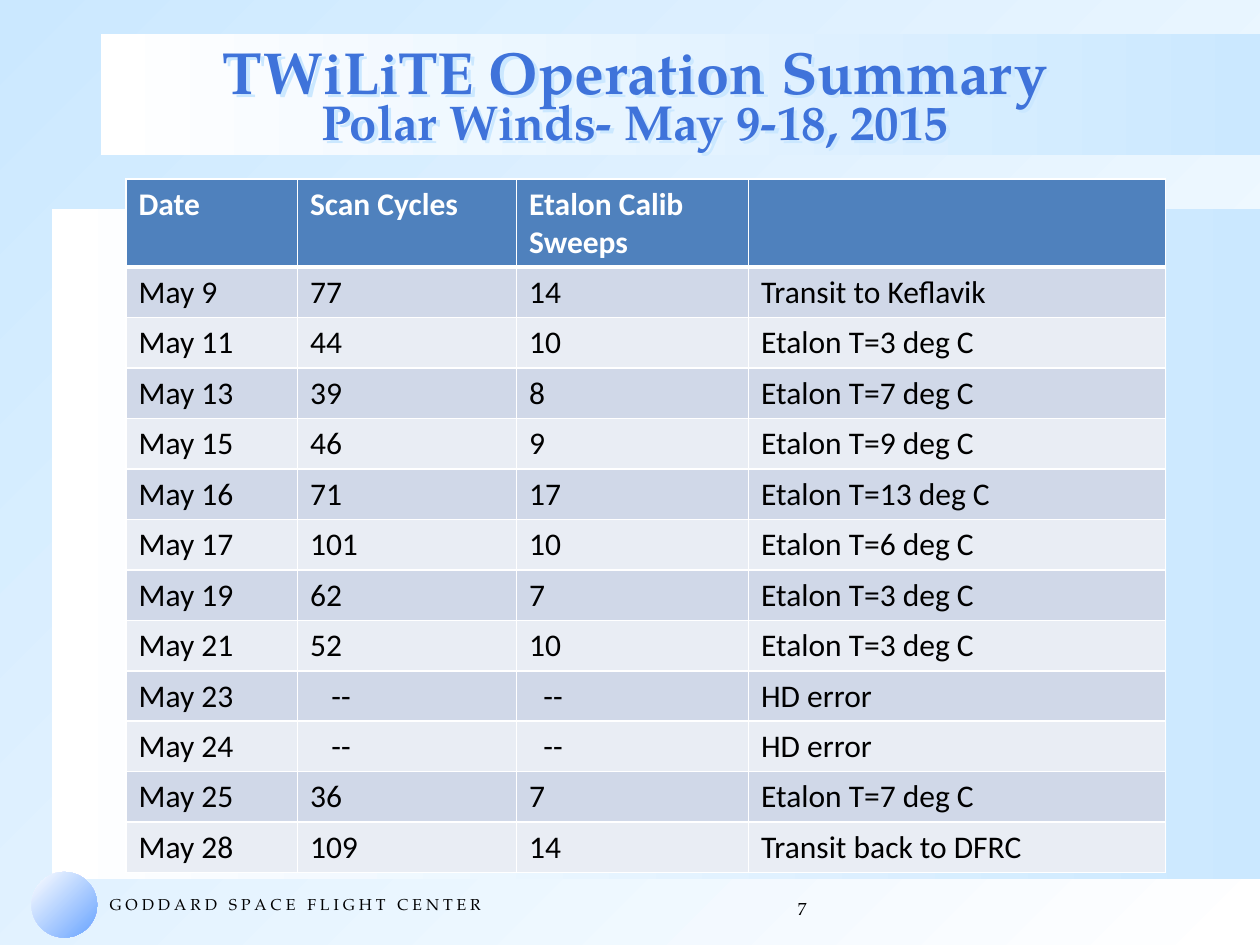
from dataclasses import dataclass

from lxml import etree
from pptx import Presentation
from pptx.dml.color import RGBColor
from pptx.enum.shapes import MSO_SHAPE
from pptx.enum.text import MSO_ANCHOR, PP_ALIGN
from pptx.oxml import parse_xml
from pptx.oxml.ns import nsdecls, qn
from pptx.util import Pt

RECTANGLE, OVAL = MSO_SHAPE.RECTANGLE, MSO_SHAPE.OVAL
LEFT, CENTER, RIGHT = PP_ALIGN.LEFT, PP_ALIGN.CENTER, PP_ALIGN.RIGHT
TOP, MIDDLE = MSO_ANCHOR.TOP, MSO_ANCHOR.MIDDLE


@dataclass(frozen=True)
class Theme:
    sky: str = "CBE8FF"
    white: str = "FFFFFF"
    black: str = "000000"
    ball: str = "67A3FF"
    title: str = "3F73DA"
    header: str = "4F81BD"
    bands: tuple = ("D0D8E8", "E9EDF4")
    serif: str = "TeX Gyre Pagella"
    sans: str = "Calibri"
    title_size: float = 34
    subtitle_size: float = 28
    table_size: float = 18
    number_size: float = 10
    footer_size: float = 9


THEME = Theme()

HEADERS = ("Date", "Scan Cycles", "Etalon Calib Sweeps", "")
ROWS = (
    ("May 9", "77", "14", "Transit to Keflavik"),
    ("May 11", "44", "10", "Etalon T=3 deg C"),
    ("May 13", "39", "8", "Etalon T=7 deg C"),
    ("May 15", "46", "9", "Etalon T=9 deg C"),
    ("May 16", "71", "17", "Etalon T=13 deg C"),
    ("May 17", "101", "10", "Etalon T=6 deg C"),
    ("May 19", "62", "7", "Etalon T=3 deg C"),
    ("May 21", "52", "10", "Etalon T=3 deg C"),
    ("May 23", "--", "--", "HD error"),
    ("May 24", "--", "--", "HD error"),
    ("May 25", "36", "7", "Etalon T=7 deg C"),
    ("May 28", "109", "14", "Transit back to DFRC"),
)
COLUMN_WIDTHS = (98, 125.25, 132.5, 238.25)
HEADER_HEIGHT, ROW_HEIGHT = 49, 28.1
CELL_MARGIN = 7.2
DASH_INDENTS = {1: 12.2, 2: 8.1}


def set_gradient(fill, colors, angle):
    """Fill with two colours; the angle runs clockwise."""
    fill.gradient()
    fill.gradient_angle = -angle % 360
    for stop, color in zip(fill.gradient_stops, colors):
        stop.color.rgb = RGBColor.from_string(color)


def add_gradient_shape(slide, kind, box, colors, angle):
    shape = slide.shapes.add_shape(kind, *map(Pt, box))
    shape.shadow.inherit = False
    shape.line.fill.background()
    set_gradient(shape.fill, colors, angle)


def write_text(frame, lines, *, sizes, color, font=THEME.serif, bold=False,
               align=LEFT, spacing=None, wrap=True, anchor=TOP):
    """Write lines, parted by line breaks, into one paragraph."""
    frame.word_wrap = wrap
    frame.vertical_anchor = anchor
    paragraph = frame.paragraphs[0]
    paragraph.alignment = align
    if spacing:
        paragraph.line_spacing = spacing
    for index, (line, size) in enumerate(zip(lines, sizes)):
        if index:
            paragraph.add_line_break()
        run = paragraph.add_run()
        run.text = line
        run.font.name = font
        run.font.size = Pt(size)
        run.font.bold = bold
        run.font.color.rgb = RGBColor.from_string(color)


def add_text(slide, box, lines, **text_format):
    shape = slide.shapes.add_textbox(*map(Pt, box))
    write_text(shape.text_frame, lines, **text_format)
    return shape


def add_backdrop(slide, body_box, title_box):
    set_gradient(slide.background.fill, (THEME.sky, THEME.white), 45)
    for box in (body_box, title_box):
        add_gradient_shape(slide, RECTANGLE, box, (THEME.white, THEME.sky), 0)


def add_title(slide, box):
    shape = add_text(
        slide, box, ("TWiLiTE Operation Summary", "Polar Winds- May 9-18, 2015"),
        sizes=(THEME.title_size, THEME.subtitle_size), color=THEME.title,
        bold=True, align=CENTER, spacing=0.75, anchor=MIDDLE)
    # Soft blue shadow behind the letters
    shape._element.spPr.append(parse_xml(
        f'<a:effectLst {nsdecls("a")}>'
        f'<a:outerShdw dist="{Pt(2.8)}" dir="2700000" algn="ctr">'
        f'<a:srgbClr val="{THEME.sky}"/></a:outerShdw></a:effectLst>'))


def add_footer(slide, box):
    left, top, width, height = box
    ball = 37.5
    add_gradient_shape(slide, OVAL, (left, top, ball, ball),
                       (THEME.white, THEME.ball), 45)
    add_text(slide, (left + ball, top + 9.5, 226.8, 18),
             (" ".join("GODDARD SPACE FLIGHT CENTER"),),
             sizes=(THEME.footer_size,), color=THEME.black, wrap=False)
    number_width = 149.75
    add_text(slide, (left + width - number_width, top + 11.5, number_width, 18),
             ("7",), sizes=(THEME.number_size,), color=THEME.black, align=RIGHT)


def set_borders(cell, **widths):
    properties = cell._tc.get_or_add_tcPr()
    for side in "LRTB":
        line = etree.SubElement(properties, qn(f"a:ln{side}"),
                                w=str(Pt(widths.get(side, 1))))
        fill = etree.SubElement(line, qn("a:solidFill"))
        etree.SubElement(fill, qn("a:srgbClr"), val=THEME.white)


def add_summary_table(slide, box):
    frame = slide.shapes.add_table(len(ROWS) + 1, len(HEADERS), *map(Pt, box))
    table = frame.table
    table.horz_banding = False
    for column, width in zip(table.columns, COLUMN_WIDTHS):
        column.width = Pt(width)
    for row_index, values in enumerate((HEADERS, *ROWS)):
        is_header = row_index == 0
        table.rows[row_index].height = Pt(HEADER_HEIGHT if is_header else ROW_HEIGHT)
        band = THEME.header if is_header else THEME.bands[(row_index - 1) % 2]
        thick = {0: {"B": 3}, 1: {"T": 3}}.get(row_index, {})
        for column_index, value in enumerate(values):
            cell = table.cell(row_index, column_index)
            set_borders(cell, **thick)
            cell.fill.solid()
            cell.fill.fore_color.rgb = RGBColor.from_string(band)
            if value == "--":
                cell.margin_left = Pt(CELL_MARGIN + DASH_INDENTS[column_index])
            if value:
                write_text(cell.text_frame, (value,), sizes=(THEME.table_size,),
                           color=THEME.white if is_header else THEME.black,
                           font=THEME.sans, bold=is_header)


def main():
    presentation = Presentation()
    presentation.slide_width, presentation.slide_height = Pt(720), Pt(540)
    slide = presentation.slides.add_slide(presentation.slide_layouts[6])
    add_backdrop(slide, body_box=(29.5, 119.5, 690.5, 383),
                 title_box=(57.5, 19.25, 662.5, 69.25))
    add_footer(slide, (18, 498.25, 450, 37.5))
    add_title(slide, (108, 12.25, 509.75, 90))
    table_height = HEADER_HEIGHT + ROW_HEIGHT * len(ROWS)
    add_summary_table(slide, (72, 102.25, sum(COLUMN_WIDTHS), table_height))
    presentation.save("out.pptx")


if __name__ == "__main__":
    main()
